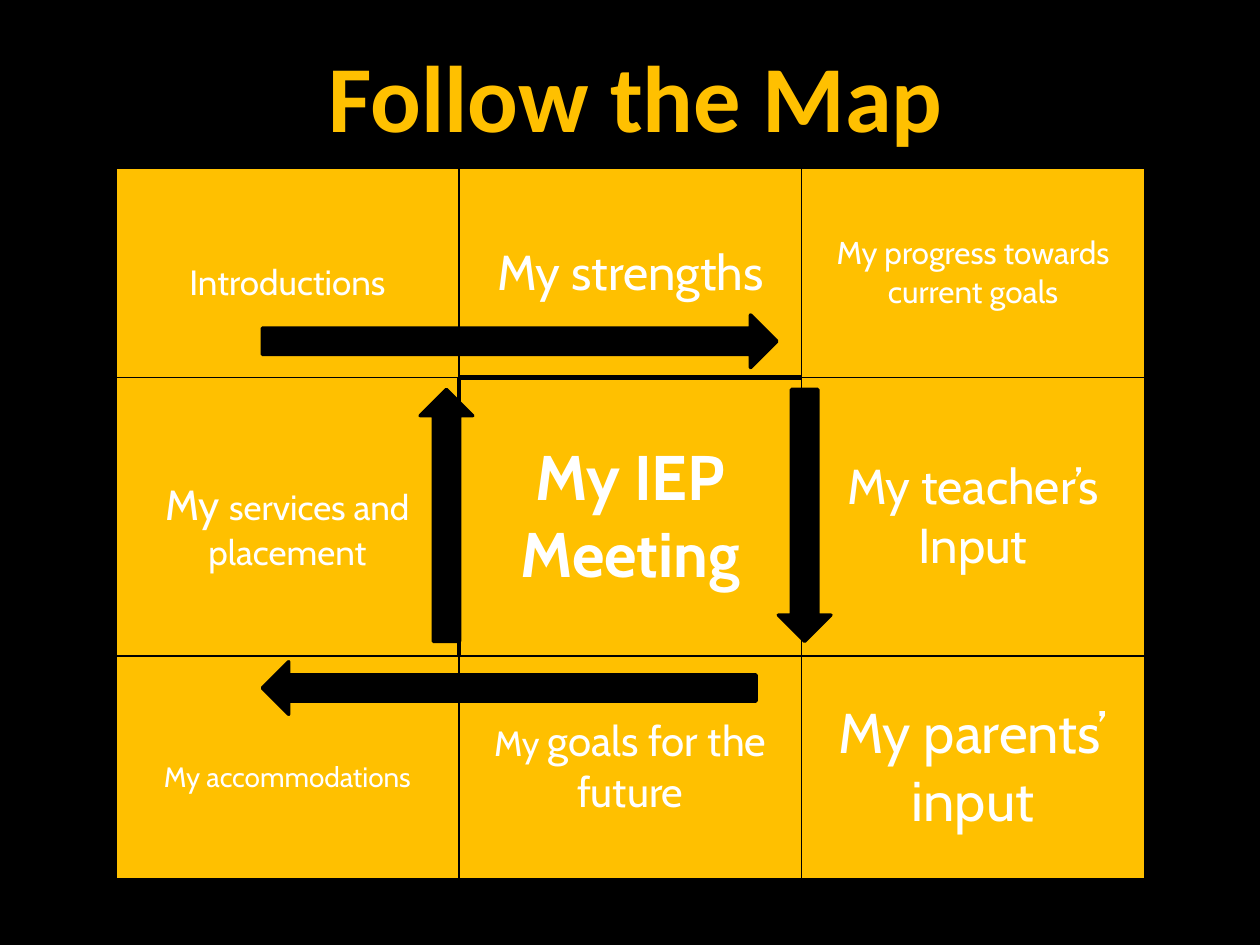
from pptx import Presentation
from pptx import util as u
from pptx.dml import color
from pptx.enum import shapes, text
from pptx.oxml import xmlchemy
from lxml import etree

COLORS = {"ground": "000000", "gold": "FFC000", "words": "FFFFFF"}
COLUMN_WIDTH = 6.91
ROW_HEIGHTS = (4.22, 5.61, 4.5)
STEPS = (
    ([("Introductions", 20)], [("My strengths", 28)], [("My progress towards current goals", 18)]),
    ([("My ", 24), ("services and placement", 20)], [("My IEP Meeting", 36)], [("My teacher’s Input", 28)]),
    ([("My accommodations", 16)], [("My ", 20), ("goals for the future", 24)], [("My parents’ input", 32)]),
)
CENTRE = (1, 1)
THICK_EDGES = {(0, 1): ("B",), (1, 0): ("R",), CENTRE: ("L", "T")}
ARROWS = (
    (2.95, 2.96, 10.37, 0),
    (11.34, 6.47, 5.08, 90),
    (2.95, 9.95, 9.95, 180),
    (4.12, 6.47, 5.08, 270),
)
ARROW_THICKNESS = 1.06


def rgb(name):
    """Return the named colour."""
    return color.RGBColor.from_string(COLORS[name])


def paint(item, name):
    """Give an item a solid fill."""
    item.fill.solid()
    item.fill.fore_color.rgb = rgb(name)


def add_span(para, words, size, font, tint, bold):
    """Append a formatted run to a paragraph."""
    span = para.add_run()
    span.text = words
    span.font.size = u.Pt(size)
    span.font.name = font
    span.font.bold = bold
    span.font.color.rgb = rgb(tint)


def draw_borders(cell, thick):
    """Outline a cell, with the listed edges thicker."""
    properties = cell._tc.get_or_add_tcPr()
    for index, edge in enumerate("LRTB"):
        width = u.Pt(3 if edge in thick else 1)
        line = etree.Element(xmlchemy.qn(f"a:ln{edge}"), w=str(int(width)))
        fill = etree.SubElement(line, xmlchemy.qn("a:solidFill"))
        etree.SubElement(fill, xmlchemy.qn("a:srgbClr"), val=COLORS["ground"])
        properties.insert(index, line)


def place_title(page, left, top, width, height):
    """Move and format the title placeholder."""
    title = page.shapes.title
    title.left, title.top, title.width, title.height = map(u.Cm, (left, top, width, height))
    frame = title.text_frame
    frame.vertical_anchor = text.MSO_ANCHOR.TOP
    frame.word_wrap = True
    para = frame.paragraphs[0]
    para.alignment = text.PP_ALIGN.CENTER
    add_span(para, "Follow the Map", 54, "Calibri", "gold", True)


def fill_cell(cell, spans, position):
    """Write and style one step of the map."""
    paint(cell, "gold")
    draw_borders(cell, THICK_EDGES.get(position, ()))
    cell.vertical_anchor = text.MSO_ANCHOR.MIDDLE
    cell.margin_left = cell.margin_right = u.Cm(0.19)
    cell.margin_top = u.Pt(12 if position[1] == 0 else 0)
    cell.margin_bottom = 0
    para = cell.text_frame.paragraphs[0]
    para.alignment = text.PP_ALIGN.CENTER
    for words, size in spans:
        add_span(para, words, size, "Cabin", "words", position == CENTRE)


def place_map(page, left, top):
    """Build the three by three grid of meeting steps."""
    count = len(STEPS[0])
    box = page.shapes.add_table(len(STEPS), count, u.Cm(left), u.Cm(top),
                                u.Cm(COLUMN_WIDTH * count), u.Cm(sum(ROW_HEIGHTS)))
    table = box.table
    table.first_row = table.horz_banding = False
    for column in table.columns:
        column.width = u.Cm(COLUMN_WIDTH)
    for row, (height, steps) in enumerate(zip(ROW_HEIGHTS, STEPS)):
        table.rows[row].height = u.Cm(height)
        for column, spans in enumerate(steps):
            fill_cell(table.cell(row, column), spans, (row, column))


def place_arrows(page, left, top):
    """Lead the eye clockwise around the centre of the map."""
    for across, down, length, turn in ARROWS:
        arrow = page.shapes.add_shape(shapes.MSO_SHAPE.RIGHT_ARROW, u.Cm(left + across), u.Cm(top + down),
                                      u.Cm(length), u.Cm(ARROW_THICKNESS))
        arrow.rotation = turn
        arrow.shadow.inherit = False
        paint(arrow, "ground")
        arrow.line.color.rgb = rgb("ground")
        arrow.line.width = u.Pt(2)


def main():
    """Build and save the deck."""
    deck = Presentation()
    deck.slide_width, deck.slide_height = u.Cm(25.4), u.Cm(19.05)
    page = deck.slides.add_slide(deck.slide_layouts[5])
    paint(page.background, "ground")
    place_title(page, 2.97, 0.64, 19.69, 2.57)
    place_map(page, 2.34, 3.39)
    place_arrows(page, 2.34, 3.39)
    deck.save("out.pptx")


if __name__ == "__main__":
    main()
